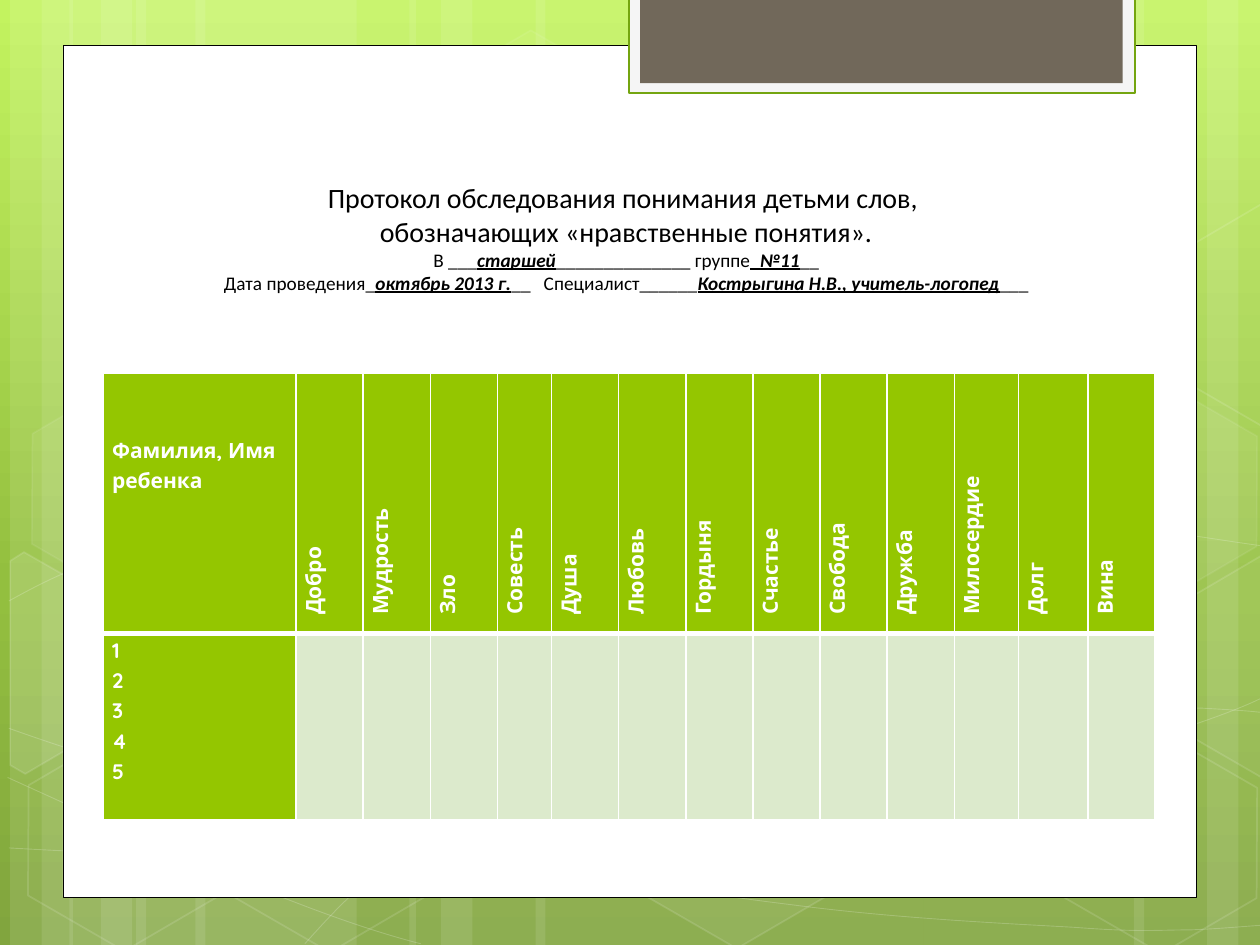
from copy import deepcopy
from dataclasses import dataclass
from math import cos, radians, sin

from lxml import etree
from pptx import Presentation
from pptx.dml.color import RGBColor
from pptx.enum.shapes import MSO_SHAPE
from pptx.enum.text import MSO_ANCHOR, MSO_AUTO_SIZE, PP_ALIGN
from pptx.oxml.ns import qn
from pptx.util import Inches, Pt

RECTANGLE = MSO_SHAPE.RECTANGLE
HEXAGON = MSO_SHAPE.HEXAGON
CENTER = PP_ALIGN.CENTER
MIDDLE = MSO_ANCHOR.MIDDLE
GROW = MSO_AUTO_SIZE.SHAPE_TO_FIT_TEXT


@dataclass(frozen=True)
class Theme:
    white: str = "FFFFFF"
    black: str = "000000"
    tab_face: str = "F5F5F5"
    tab_edge: str = "74A510"
    tab_core: str = "71685A"
    header: str = "94C600"
    body: str = "DCEACC"
    backdrop: tuple = ((0, "C3F35F"), (0.62, "93BF3F"), (1, "81A53E"))
    heading_font: str = "Calibri"
    table_font: str = "Quicksand"
    heading_size: int = 16
    detail_size: int = 11
    table_size: int = 12


BANDS = [(1.08, 1.75), (0.08, 0.5), (0.33, 0.83), (1.55, 1.75), (0.55, 0.5), (0.8, 0.83),
         (7.33, 1.75), (9.58, 0.5), (9, 0.83), (4.25, 3.08), (3.25, 0.5), (3.5, 0.83)]

WAVES = [
    [(0.07, 6.73), (0.61, 6.76), (1.15, 6.79), (1.9, 6.78), (2.65, 6.77), (3.58, 6.75),
     (4.58, 6.65), (5.58, 6.55), (7, 6.36), (7.92, 6.17), (8.83, 5.98), (9.77, 5.68),
     (10.07, 5.51)],
    [(0.07, 4.77), (0.36, 4.61), (0.65, 4.46), (1.21, 4.31), (1.78, 4.16), (2.59, 3.94),
     (3.47, 3.87), (4.36, 3.8), (5.44, 3.79), (6.54, 3.87), (7.64, 3.95), (9.47, 4.26),
     (10.07, 4.34)],
    [(0.06, 6.17), (1.27, 6.72), (2.47, 7.27), (3.34, 7.49)],
    [(0.07, 5.78), (0.38, 5.89), (0.7, 6), (1.28, 6.16), (1.86, 6.31), (2.73, 6.56),
     (3.57, 6.73), (4.4, 6.9), (5.45, 7.08), (6.28, 7.18), (7.11, 7.29), (8, 7.33),
     (8.53, 7.36), (9.05, 7.4), (9.19, 7.38), (9.45, 7.38), (9.71, 7.37), (9.89, 7.35),
     (10.07, 7.34)],
]
FLAT_WAVE = [
    (2.42, 7.49), (2.6, 7.29), (2.78, 7.09), (3.02, 6.91), (3.26, 6.73), (3.6, 6.53),
    (3.88, 6.39), (4.16, 6.25), (4.33, 6.19), (4.7, 6.09), (5.06, 5.99), (5.73, 5.85),
    (6.08, 5.78), (6.44, 5.71), (6.49, 5.71), (6.8, 5.69), (7.11, 5.66), (7.6, 5.63),
    (7.94, 5.62), (8.29, 5.61), (8.86, 5.62), (8.86, 5.62), (9.53, 5.62), (9.71, 5.63),
    (9.88, 5.64), (9.97, 5.65), (10.06, 5.66), (10.03, 5.65), (10.06, 5.66)]
FLAT_END = 22

HEXAGONS = [(3.34, 0.36, 4, 8), (4.97, 5.89, 6, 12), (0.11, 5.91, None, 12),
            (0.14, 3.12, 7, 8), (1.74, 5.92, None, 12), (7.53, 4.53, 10, 12),
            (8.34, 5.93, None, 12), (8.34, 3.14, 7, 8)]
TILT = 30

LEFT_EDGE = [(0.08, 4.45), (0.19, 4.38), (0.96, 4.82), (0.95, 5.7), (0.2, 6.14), (0.08, 6.07)]
RIGHT_EDGE = [(9.26, 4.85), (10.01, 4.41), (10.09, 4.46), (10.09, 6.13), (10.02, 6.17),
              (9.26, 5.73)]
EDGE_RISE = 2.79

HEADING = ["Протокол обследования понимания детьми слов, ",
           "обозначающих «нравственные понятия»."]
DETAILS = [
    [("В ___", False), ("старшей", True), ("______________ группе", False),
     ("_№11", True), ("__", False)],
    [("Дата проведения_", False), ("октябрь 2013 г.", True), ("__   Специалист______", False),
     ("Кострыгина Н.В., учитель-логопед", True), ("___", False)],
]
CONCEPTS = ["Добро", "Мудрость", "Зло", "Совесть", "Душа", "Любовь", "Гордыня", "Счастье",
            "Свобода", "Дружба", "Милосердие", "Долг", "Вина"]
SPECIAL_WIDTHS = {0: 1.53, 4: 0.43, 11: 0.51, 12: 0.55}


def untilt(points, center):
    c, s = cos(radians(TILT)), sin(radians(TILT))
    offsets = [(x - center[0], y - center[1]) for x, y in points]
    return [(center[0] + x * c + y * s, center[1] - x * s + y * c) for x, y in offsets]


class SlideBuilder:
    def __init__(self, slide, theme):
        self.slide = slide
        self.theme = theme

    def backdrop(self):
        fill = self.slide.background.fill
        fill.gradient()
        fill.gradient_angle = 270
        stops = self.slide.element.find(".//" + qn("a:gsLst"))
        stops.insert(1, deepcopy(stops[0]))
        for stop, (position, color) in zip(fill.gradient_stops, self.theme.backdrop):
            stop.position = position
            stop.color.rgb = RGBColor.from_string(color)

    def fade(self, holder, opacity):
        if opacity < 100:
            color = holder.find(qn("a:solidFill") + "/" + qn("a:srgbClr"))
            etree.SubElement(color, qn("a:alpha"), val=str(opacity * 1000))

    def paint(self, shape, fill=None, opacity=100, line=None, weight=1, line_opacity=100):
        shape.shadow.inherit = False
        properties = shape.element.spPr
        if fill:
            shape.fill.solid()
            shape.fill.fore_color.rgb = RGBColor.from_string(fill)
            self.fade(properties, opacity)
        else:
            shape.fill.background()
        if line:
            shape.line.color.rgb = RGBColor.from_string(line)
            shape.line.width = Pt(weight)
            self.fade(properties.find(qn("a:ln")), line_opacity)
        else:
            shape.line.fill.background()

    def preset(self, kind, box, **style):
        shape = self.slide.shapes.add_shape(kind, *map(Inches, box))
        self.paint(shape, **style)
        return shape

    def hexagon(self, left, top, **style):
        shape = self.preset(HEXAGON, (left, top, 1.75, 1.52), **style)
        shape.adjustments[0] = 0.285
        shape.rotation = TILT

    def outline(self, points, close=False, **style):
        start, *rest = [(Inches(x), Inches(y)) for x, y in points]
        builder = self.slide.shapes.build_freeform(*start)
        builder.add_line_segments(rest, close=close)
        shape = builder.convert_to_shape()
        self.paint(shape, **style)
        return shape

    def clipped_hexagon(self, points, center, **style):
        self.outline(untilt(points, center), close=True, **style).rotation = TILT

    def wave(self, points, straight=None):
        shape = self.outline(points, line=self.theme.white, weight=0.5, line_opacity=20)
        segments = list(shape.element.iter(qn("a:lnTo")))
        if straight:
            del segments[straight - 1]
        for first in range(0, len(segments), 3):
            curve = etree.Element(qn("a:cubicBezTo"))
            segments[first].addprevious(curve)
            for segment in segments[first:first + 3]:
                curve.append(segment[0])
                segment.getparent().remove(segment)

    def format_text(self, paragraph, font, size, color, bold=False):
        paragraph.font.name = font
        paragraph.font.size = Pt(size)
        paragraph.font.bold = bold
        paragraph.font.color.rgb = RGBColor.from_string(color)

    def heading(self, box, lines, details):
        title = self.slide.shapes.title
        title.left, title.top, title.width, title.height = map(Inches, box)
        title.element.getparent().append(title.element)
        frame = title.text_frame
        frame.word_wrap = True
        frame.vertical_anchor = MIDDLE
        frame.auto_size = GROW
        theme = self.theme
        content = [([(line, False)], theme.heading_size) for line in lines]
        content += [(parts, theme.detail_size) for parts in details]
        for index, (parts, size) in enumerate(content):
            paragraph = frame.add_paragraph() if index else frame.paragraphs[0]
            paragraph.alignment = CENTER
            self.format_text(paragraph, theme.heading_font, size, theme.black)
            for text, filled_in in parts:
                run = paragraph.add_run()
                run.text = text
                if filled_in:
                    run.font.bold = run.font.italic = run.font.underline = True

    def cell(self, cell, text, fill, top=1, bottom=1, upright=False):
        cell.margin_left = cell.margin_right = Inches(0.07)
        cell.margin_top = cell.margin_bottom = 0
        cell.text = text
        for paragraph in cell.text_frame.paragraphs:
            paragraph.line_spacing = 1.15
            self.format_text(paragraph, self.theme.table_font, self.theme.table_size,
                             self.theme.white, bold=True)
            if upright:
                paragraph._p.get_or_add_pPr().set("marL", str(Inches(0.08)))
        properties = cell._tc.get_or_add_tcPr()
        if upright:
            properties.set("vert", "vert270")
        for side, weight in (("L", 1), ("R", 1), ("T", top), ("B", bottom)):
            border = etree.SubElement(properties, qn("a:ln" + side), w=str(Pt(weight)))
            solid = etree.SubElement(border, qn("a:solidFill"))
            etree.SubElement(solid, qn("a:srgbClr"), val=self.theme.white)
        cell.fill.solid()
        cell.fill.fore_color.rgb = RGBColor.from_string(fill)

    def protocol(self, box, concepts):
        columns = len(concepts) + 1
        table = self.slide.shapes.add_table(2, columns, *map(Inches, box)).table
        table.first_col = True
        table.horz_banding = False
        regular = (box[2] - sum(SPECIAL_WIDTHS.values())) / (columns - len(SPECIAL_WIDTHS))
        for index, column in enumerate(table.columns):
            column.width = Inches(SPECIAL_WIDTHS.get(index, regular))
        for row, height in zip(table.rows, (2.07, 1.48)):
            row.height = Inches(height)
        theme = self.theme
        name_cell = table.cell(0, 0)
        self.cell(name_cell, "Фамилия, Имя ребенка", theme.header, bottom=3)
        name_cell.margin_top = Inches(0.48)
        self.cell(table.cell(1, 0), "\n".join("12345"), theme.header, top=3)
        for index, concept in enumerate(concepts, 1):
            self.cell(table.cell(0, index), concept, theme.header, bottom=3, upright=True)
            self.cell(table.cell(1, index), "", theme.body, top=3)


def main():
    deck = Presentation()
    deck.slide_width, deck.slide_height = Inches(10), Inches(7.5)
    theme = Theme()
    page = SlideBuilder(deck.slides.add_slide(deck.slide_layouts[5]), theme)
    white = theme.white
    page.backdrop()
    for left, width in BANDS:
        page.preset(RECTANGLE, (left, 0, width, 7.5), fill=white, opacity=10)
    for points in WAVES:
        page.wave(points)
    page.wave(FLAT_WAVE, straight=FLAT_END)
    for left, top, opacity, line_opacity in HEXAGONS:
        page.hexagon(left, top, fill=white if opacity else None, opacity=opacity or 100,
                     line=white, line_opacity=line_opacity)
    upper_edge = [(x, y - EDGE_RISE) for x, y in RIGHT_EDGE]
    for points, center, fill, opacity in ((LEFT_EDGE, (0.36, 5.35), white, 10),
                                          (RIGHT_EDGE, (9.85, 5.2), white, 4),
                                          (upper_edge, (9.85, 5.2 - EDGE_RISE), None, 100)):
        page.clipped_hexagon(points, center, fill=fill, opacity=opacity, line=white,
                             line_opacity=12)
    page.preset(RECTANGLE, (0.5, 0.36, 9, 6.76), fill=white, line=theme.black, weight=0.5)
    page.preset(RECTANGLE, (4.99, -0.02, 4.02, 0.76), fill=theme.tab_face,
                line=theme.tab_edge, weight=1.25)
    page.preset(RECTANGLE, (5.08, -0.02, 3.83, 0.68), fill=theme.tab_core)
    page.protocol((0.82, 2.96, 8.35, 3.54), CONCEPTS)
    page.heading((0.48, 1.38, 8.98, 1.01), HEADING, DETAILS)
    deck.save("out.pptx")


if __name__ == "__main__":
    main()
